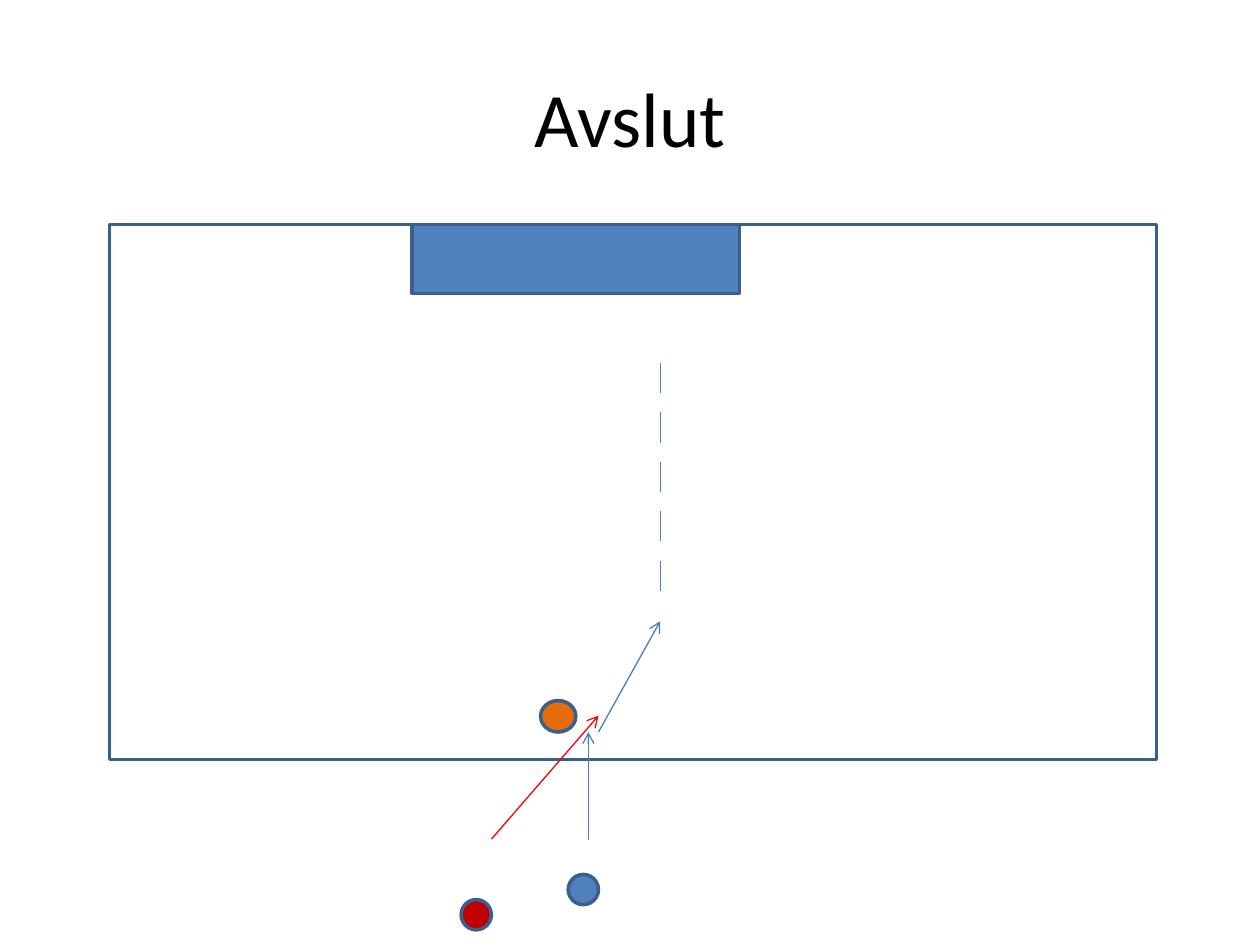
from lxml.etree import SubElement
from pptx import Presentation
from pptx.dml.color import RGBColor
from pptx.enum.shapes import MSO_CONNECTOR as Connector, MSO_SHAPE as Shape
from pptx.enum.text import MSO_ANCHOR as Anchor, PP_ALIGN as Align
from pptx.oxml.ns import qn
from pptx.util import Inches, Pt

BLUE = "4F81BD"
OUTLINE = "3A5F8C"
LINE_BLUE = "4B7EBC"
RED = "FF0000"
DARK_RED = "C00000"
ORANGE = "E46C0A"


def color(hex_value):
    return RGBColor.from_string(hex_value)


def write_text(shape, text, size=44, font="Calibri", fill="000000",
               align=Align.CENTER, anchor=Anchor.MIDDLE):
    frame = shape.text_frame
    frame.word_wrap = True
    frame.vertical_anchor = anchor
    paragraph = frame.paragraphs[0]
    paragraph.alignment = align
    run = paragraph.add_run()
    run.text = text
    run.font.size = Pt(size)
    run.font.name = font
    run.font.color.rgb = color(fill)


def add_figure(slide, kind, left, top, width, height, fill=None):
    shape = slide.shapes.add_shape(
        kind, Inches(left), Inches(top), Inches(width), Inches(height))
    shape.shadow.inherit = False
    if fill:
        shape.fill.solid()
        shape.fill.fore_color.rgb = color(fill)
    else:
        shape.fill.background()
    shape.line.color.rgb = color(OUTLINE)
    shape.line.width = Pt(2)
    return shape


def add_line(slide, start, end, stroke=LINE_BLUE, arrow=False):
    line = slide.shapes.add_connector(
        Connector.STRAIGHT, *(Inches(value) for value in (*start, *end)))
    line.line.color.rgb = color(stroke)
    line.line.width = Pt(0.75)
    properties = line.element.spPr
    if arrow:
        SubElement(properties.find(qn("a:ln")), qn("a:tailEnd"), type="arrow")
    SubElement(properties, qn("a:effectLst"))
    return line


def add_title(slide, left, top, width, height):
    title = slide.shapes.title
    title.left, title.top = Inches(left), Inches(top)
    title.width, title.height = Inches(width), Inches(height)
    write_text(title, "Avslut")


def add_pitch(slide, left, top, width, height):
    add_figure(slide, Shape.RECTANGLE, left + 2.4, top, 2.6, 0.55, BLUE)
    add_figure(slide, Shape.RECTANGLE, left, top, width, height)


def add_players(slide, left, top):
    players = [
        (1.24, 1.38, 0.24, 0.24, BLUE),
        (0.39, 1.58, 0.24, 0.24, DARK_RED),
        (1.02, 0, 0.28, 0.25, ORANGE),
    ]
    for x, y, width, height, fill in players:
        add_figure(slide, Shape.OVAL, left + x, top + y, width, height, fill)


def add_runs(slide, left, top):
    runs = [
        ((0.77, 1.74), (0.77, 0.88), LINE_BLUE),
        ((0, 1.73), (0.85, 0.75), RED),
        ((0.85, 0.88), (1.34, 0), LINE_BLUE),
    ]
    for (x1, y1), (x2, y2), stroke in runs:
        add_line(slide, (left + x1, top + y1), (left + x2, top + y2),
                 stroke, arrow=True)


def add_shot(slide, left, top, height, count=5, dash=0.24):
    step = (height - dash) / (count - 1)
    for index in range(count):
        y = top + index * step
        add_line(slide, (left, y + dash), (left, y))


def main():
    presentation = Presentation()
    presentation.slide_width = Inches(10)
    presentation.slide_height = Inches(7.5)
    slide = presentation.slides.add_slide(presentation.slide_layouts[5])
    add_title(slide, 0.5, 0.3, 9, 1.25)
    add_pitch(slide, 0.87, 1.78, 8.31, 4.25)
    add_players(slide, 3.27, 5.56)
    add_runs(slide, 3.9, 4.93)
    add_shot(slide, 5.24, 2.88, 1.81)
    presentation.save("out.pptx")


if __name__ == "__main__":
    main()
